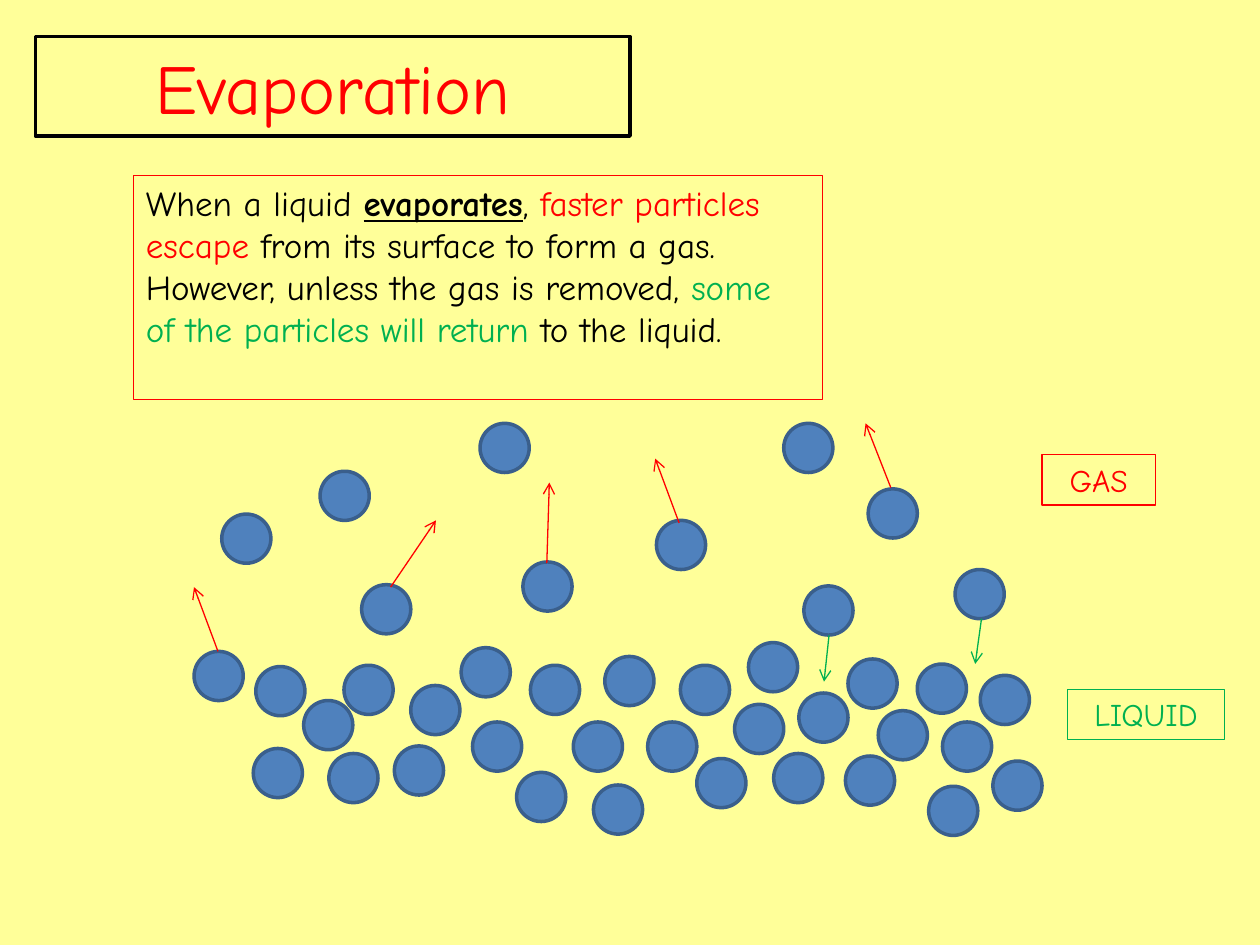
from lxml import etree
from pptx import Presentation
from pptx.dml.color import RGBColor
from pptx.enum import shapes, text
from pptx.oxml.ns import qn
from pptx.util import Inches, Pt

YELLOW = RGBColor(0xFF, 0xFF, 0x99)
RED = RGBColor(0xFF, 0x00, 0x00)
GREEN = RGBColor(0x00, 0xB0, 0x50)
BLACK = RGBColor(0x00, 0x00, 0x00)
BLUE = RGBColor(0x4F, 0x81, 0xBD)
DARK_BLUE = RGBColor(0x3A, 0x5F, 0x8C)
FONT = "Comic Neue"
DIAMETER = 0.39

LIQUID_PARTICLES = [
    (2.01, 5.94), (3.13, 5.92), (4.8, 5.21), (4.55, 5.73), (3.75, 5.73),
    (3.66, 5.14), (2.73, 5.28), (4.21, 5.28), (3.26, 5.44), (5.53, 6.02),
    (5.83, 5.59), (5.94, 5.1), (5.4, 5.28), (4.71, 6.23), (5.14, 5.73),
    (7.48, 5.73), (7.37, 6.24), (7.28, 5.27), (6.97, 5.64), (6.71, 6),
    (6.14, 5.98), (6.73, 5.23), (6.34, 5.5), (2.03, 5.29), (2.41, 5.56),
    (2.61, 5.98), (4.1, 6.13), (7.78, 5.36), (1.54, 5.17), (7.88, 6.04),
]
GAS_PARTICLES = [
    (2.54, 3.74), (6.38, 4.65), (6.22, 3.36), (5.21, 4.13), (4.15, 4.46),
    (3.81, 3.36), (2.87, 4.64), (1.76, 4.08), (6.89, 3.88), (7.58, 4.52),
]
ESCAPE_ARROWS = [
    (1.73, 5.17, 1.54, 4.66), (3.1, 4.66, 3.46, 4.13),
    (4.34, 4.47, 4.36, 3.83), (5.39, 4.15, 5.2, 3.64),
    (7.07, 3.87, 6.87, 3.36),
]
RETURN_ARROWS = [(6.58, 5.04, 6.54, 5.41), (7.79, 4.91, 7.74, 5.27)]

EXPLANATION = [
    ("When a liquid ", BLACK, False),
    ("evaporates", BLACK, True),
    (", ", BLACK, False),
    ("faster particles escape", RED, False),
    (" from its surface to form a gas. However, unless the gas is removed, ",
     BLACK, False),
    ("some of the particles will return", GREEN, False),
    (" to the liquid.", BLACK, False),
]


def set_outline(shape, color, width):
    shape.line.color.rgb = color
    shape.line.width = Pt(width)


def add_span(para, words, size, color, key_term=False):
    """Add one run; a key term is bold and underlined."""
    span = para.add_run()
    span.text = words
    span.font.name = FONT
    span.font.size = Pt(size)
    span.font.color.rgb = color
    span.font.bold = key_term
    span.font.underline = key_term


def format_title(title):
    title.left, title.top = Inches(0.28), Inches(0.29)
    title.width, title.height = Inches(4.72), Inches(0.79)
    outline = etree.SubElement(title._element.spPr, qn("a:prstGeom"),
                               prst="roundRect")
    etree.SubElement(outline, qn("a:avLst"))
    title.fill.solid()
    title.fill.fore_color.rgb = YELLOW
    set_outline(title, BLACK, 2)
    frame = title.text_frame
    frame.vertical_anchor = text.MSO_ANCHOR.MIDDLE
    frame.auto_size = text.MSO_AUTO_SIZE.NONE
    para = frame.paragraphs[0]
    para.alignment = text.PP_ALIGN.CENTER
    add_span(para, "Evaporation", 40, RED)


def add_particle(page, left, top):
    particle = page.shapes.add_shape(
        shapes.MSO_SHAPE.OVAL, Inches(left), Inches(top),
        Inches(DIAMETER), Inches(DIAMETER))
    particle.shadow.inherit = False
    particle.fill.solid()
    particle.fill.fore_color.rgb = BLUE
    set_outline(particle, DARK_BLUE, 2)


def add_arrow(page, ends, color):
    arrow = page.shapes.add_connector(
        shapes.MSO_CONNECTOR.STRAIGHT, *[Inches(end) for end in ends])
    set_outline(arrow, color, 0.75)
    etree.SubElement(arrow.line._get_or_add_ln(), qn("a:tailEnd"), type="arrow")
    etree.SubElement(arrow._element.spPr, qn("a:effectLst"))


def add_text_box(page, place, border, spans, size, align):
    box = page.shapes.add_textbox(*[Inches(length) for length in place])
    set_outline(box, border, 0.75)
    box.text_frame.word_wrap = True
    para = box.text_frame.paragraphs[0]
    para.alignment = align
    for words, color, key_term in spans:
        add_span(para, words, size, color, key_term)


def main():
    deck = Presentation()
    deck.slide_width, deck.slide_height = Inches(10), Inches(7.5)
    page = deck.slides.add_slide(deck.slide_layouts[5])
    page.background.fill.solid()
    page.background.fill.fore_color.rgb = YELLOW
    format_title(page.shapes.title)

    for left, top in LIQUID_PARTICLES + GAS_PARTICLES:
        add_particle(page, left, top)
    for arrows, color in ((ESCAPE_ARROWS, RED), (RETURN_ARROWS, GREEN)):
        for ends in arrows:
            add_arrow(page, ends, color)

    add_text_box(page, (1.06, 1.39, 5.47, 1.78), RED, EXPLANATION, 20,
                 text.PP_ALIGN.LEFT)
    for words, color, place in (("GAS", RED, (8.27, 3.61, 0.9, 0.4)),
                                ("LIQUID", GREEN, (8.47, 5.47, 1.25, 0.4))):
        add_text_box(page, place, color, [(words, color, False)], 18,
                     text.PP_ALIGN.CENTER)
    deck.save("out.pptx")


if __name__ == "__main__":
    main()
